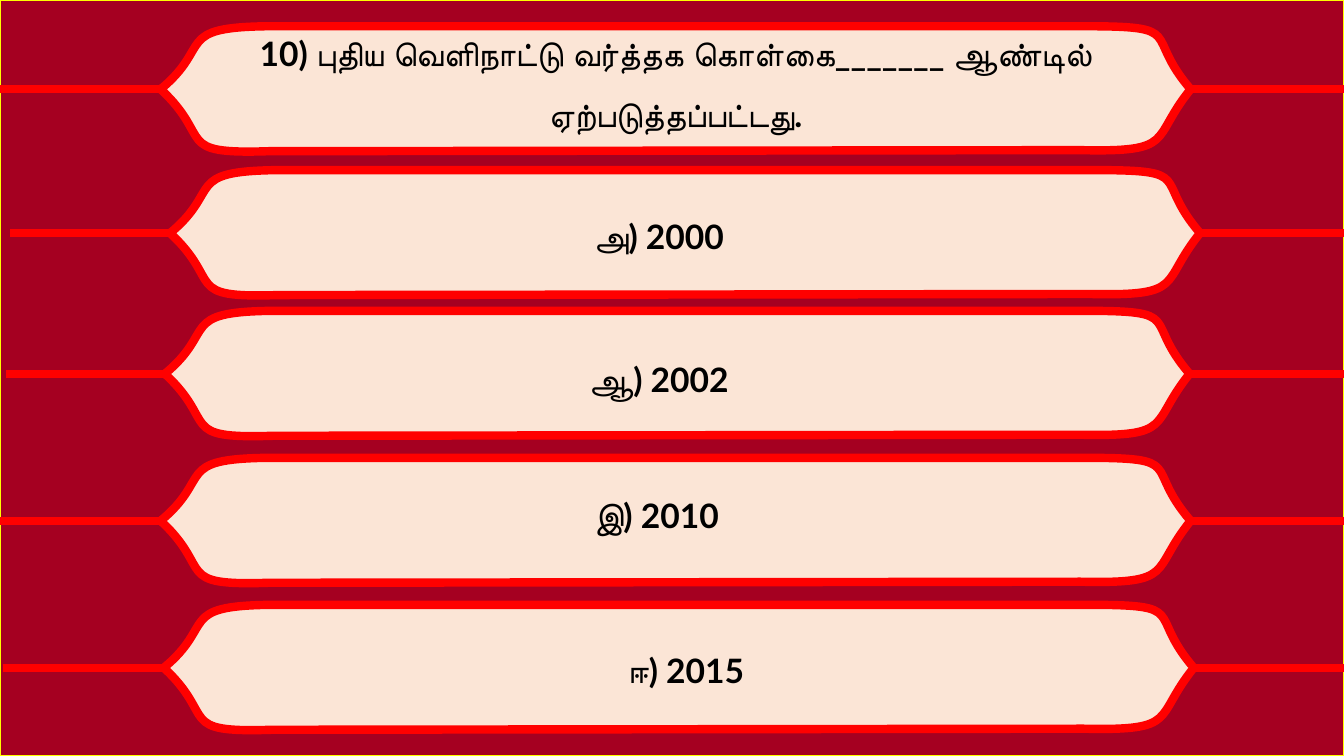
from lxml import etree
from pptx import Presentation
from pptx import util as u
from pptx.dml.color import RGBColor
from pptx.enum import shapes, text
from pptx.oxml.ns import qn

PX = 9525
SLIDE_W, SLIDE_H = 1280, 720
BANNER_W, AXIS = 981, 60
COLOURS = {"backdrop": "A50021", "frame": "FFFF00", "rail": "FF0000",
           "banner": "FBE5D6", "ink": "000000"}
FONT = {"name": "Lato", "size": u.Pt(24), "bold": True}

# left, top, width of banner, start of rail
BANNERS = [(153, 25, 981, 0), (162, 162, 981, 10), (157, 296, 976, 6),
           (153, 436, 981, 0), (156, 576, 981, 3)]
QUESTION = "10) புதிய வெளிநாட்டு வர்த்தக கொள்கை_______ ஆண்டில் ஏற்படுத்தப்பட்டது."
# answer, then left, top, width of its box
ANSWERS = [("அ) 2000", 171, 182, 913), ("ஈ) 2015", 197, 595, 913),
           ("ஆ) 2002", 298, 318, 659)]


def px(length):
    return u.Emu(length * PX)


def colour(name):
    return RGBColor.from_string(COLOURS[name])


def paint(shape, fill, line, weight):
    shape.shadow.inherit = False
    shape.fill.solid()
    shape.fill.fore_color.rgb = colour(fill)
    shape.line.color.rgb = colour(line)
    shape.line.width = u.Pt(weight)


def write(shape, words, space_after=0, **frame_format):
    frame = shape.text_frame
    for name, value in {"word_wrap": True, **frame_format}.items():
        setattr(frame, name, value)
    paragraph = frame.paragraphs[0]
    spacing = {"alignment": text.PP_ALIGN.CENTER, "line_spacing": 1.5,
               "space_after": u.Pt(space_after)}
    for name, value in spacing.items():
        setattr(paragraph, name, value)
    run = paragraph.add_run()
    run.text = words
    for name, value in FONT.items():
        setattr(run.font, name, value)
    run.font.color.rgb = colour("ink")


def outline(width):
    """Steps round the banner: one point is a line, three points a curve."""
    edge = width - BANNER_W
    return [[(50, 19), (12, 1), (103, 0)],
            [(878 + edge, 0)],
            [(979 + edge, 0), (935 + edge, 7), (width, AXIS)],
            [(942 + edge, 108), (968 + edge, 120), (876 + edge, 118)],
            [(103, 119)],
            [(11, 122), (51, 107), (0, AXIS)]]


def bend(banner, steps):
    """Turn the straight segments of three-point steps into Bézier curves."""
    segments = list(banner._element.iter(qn("a:lnTo")))
    for segment, points in zip(segments, steps):
        if len(points) == 3:
            segment.tag = qn("a:cubicBezTo")
            for x, y in reversed(points[:2]):
                control = etree.Element(qn("a:pt"), x=str(x), y=str(y))
                segment.insert(0, control)


def add_rail(group, start, y):
    rail = group.shapes.add_connector(
        shapes.MSO_CONNECTOR.STRAIGHT, px(start), px(y), px(SLIDE_W), px(y))
    rail.line.color.rgb = colour("rail")
    rail.line.width = u.Pt(6)
    etree.SubElement(rail._element.spPr, qn("a:effectLst"))


def add_banner(slide, left, top, width, rail_start):
    group = slide.shapes.add_group_shape()
    add_rail(group, rail_start, top + AXIS)
    steps = outline(width)
    builder = group.shapes.build_freeform(0, AXIS, scale=PX)
    builder.add_line_segments([points[-1] for points in steps], close=True)
    banner = builder.convert_to_shape(px(left), px(top))
    bend(banner, steps)
    paint(banner, "banner", "rail", 6)
    return banner


def add_answer(slide, words, left, top, width):
    box = slide.shapes.add_textbox(px(left), px(top), px(width), px(63))
    write(box, words, space_after=10,
          auto_size=text.MSO_AUTO_SIZE.SHAPE_TO_FIT_TEXT)


def main():
    deck = Presentation()
    deck.slide_width, deck.slide_height = px(SLIDE_W), px(SLIDE_H)
    slide = deck.slides.add_slide(deck.slide_layouts[6])
    backdrop = slide.shapes.add_shape(
        shapes.MSO_SHAPE.RECTANGLE, 0, 0, px(SLIDE_W), px(SLIDE_H))
    paint(backdrop, "backdrop", "frame", 1)

    banners = [add_banner(slide, *place) for place in BANNERS]
    raised = {"vertical_anchor": text.MSO_ANCHOR.MIDDLE,
              "margin_bottom": px(34)}
    write(banners[0], QUESTION, **raised)
    write(banners[3], "இ) 2010", margin_right=px(46), **raised)
    for answer in ANSWERS:
        add_answer(slide, *answer)
    deck.save("out.pptx")


if __name__ == "__main__":
    main()
